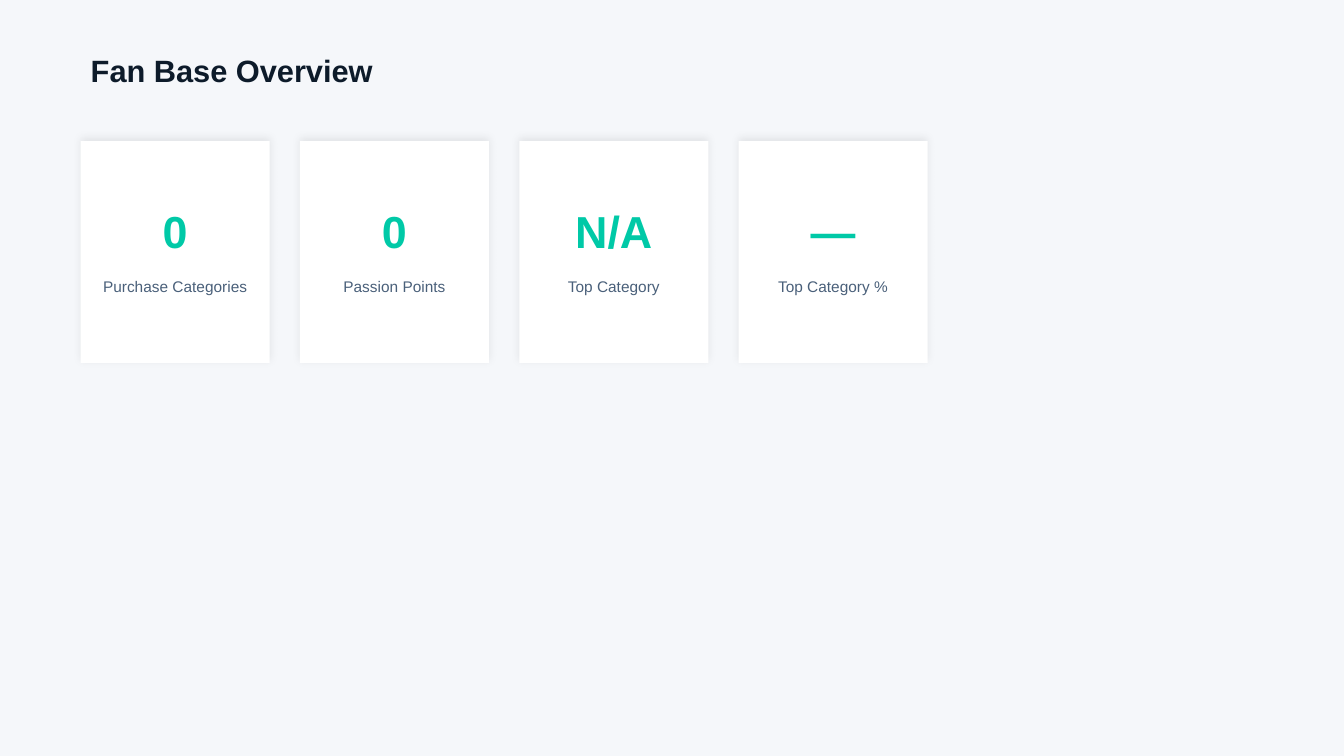
from dataclasses import dataclass
from lxml import etree
from pptx import Presentation
from pptx.dml.color import RGBColor
from pptx.enum.shapes import MSO_SHAPE
from pptx.enum.text import MSO_ANCHOR, MSO_AUTO_SIZE, PP_ALIGN
from pptx.oxml import parse_xml
from pptx.oxml.ns import nsdecls, qn
from pptx.util import Inches, Pt


@dataclass(frozen=True)
class Theme:
    font: str = "Arial"
    background: str = "F5F7FA"
    card: str = "FFFFFF"
    shadow: str = "000000"
    title: str = "0D1B2A"
    value: str = "00C9A7"
    label: str = "4A607A"
    title_size: int = 22
    value_size: int = 32
    label_size: int = 11


theme = Theme()


def set_text(sp, text, size, color, bold, align, anchor):
    tf = sp.text_frame
    tf.word_wrap = True
    tf.auto_size = MSO_AUTO_SIZE.NONE
    tf.vertical_anchor = anchor
    p = tf.paragraphs[0]
    p.text = text
    p.alignment = align
    p.font.name = theme.font
    p.font.size = Pt(size)
    p.font.bold = bold
    p.font.color.rgb = RGBColor.from_string(color)


def add_shadow(sp):
    sp.shadow.inherit = False
    effects = sp._element.spPr.find(qn("a:effectLst"))
    shadow = parse_xml(
        f'<a:outerShdw {nsdecls("a")} blurRad="{Pt(6)}" dist="{Pt(2)}" '
        'dir="16200000" algn="bl" rotWithShape="0"/>'
    )
    color = etree.SubElement(shadow, qn("a:srgbClr"), val=theme.shadow)
    etree.SubElement(color, qn("a:alpha"), val="8000")
    effects.append(shadow)


prs = Presentation()
prs.slide_width = Inches(13.33)
prs.slide_height = Inches(7.5)
s = prs.slides.add_slide(prs.slide_layouts[5])
s.background.fill.solid()
s.background.fill.fore_color.rgb = RGBColor.from_string(theme.background)

left, width, gap = 0.8, 8.4, 0.3
title = s.shapes.title
title.left, title.top = Inches(left), Inches(0.4)
title.width, title.height = Inches(width), Inches(0.6)
set_text(title, "Fan Base Overview", theme.title_size, theme.title, True,
         PP_ALIGN.LEFT, MSO_ANCHOR.MIDDLE)

stats = [
    ("0", "Purchase Categories"),
    ("0", "Passion Points"),
    ("N/A", "Top Category"),
    ("—", "Top Category %"),
]
card_width = (width - gap * (len(stats) - 1)) / len(stats)

for i, (value, label) in enumerate(stats):
    x, w = Inches(left + i * (card_width + gap)), Inches(card_width)
    card = s.shapes.add_shape(MSO_SHAPE.RECTANGLE, x, Inches(1.4), w, Inches(2.2))
    card.fill.solid()
    card.fill.fore_color.rgb = RGBColor.from_string(theme.card)
    card.line.fill.background()
    add_shadow(card)

    value_box = s.shapes.add_textbox(x, Inches(1.6), w, Inches(1))
    set_text(value_box, value, theme.value_size, theme.value, True,
             PP_ALIGN.CENTER, MSO_ANCHOR.BOTTOM)

    label_box = s.shapes.add_textbox(x, Inches(2.7), w, Inches(0.7))
    set_text(label_box, label, theme.label_size, theme.label, False,
             PP_ALIGN.CENTER, MSO_ANCHOR.TOP)

prs.save("out.pptx")
